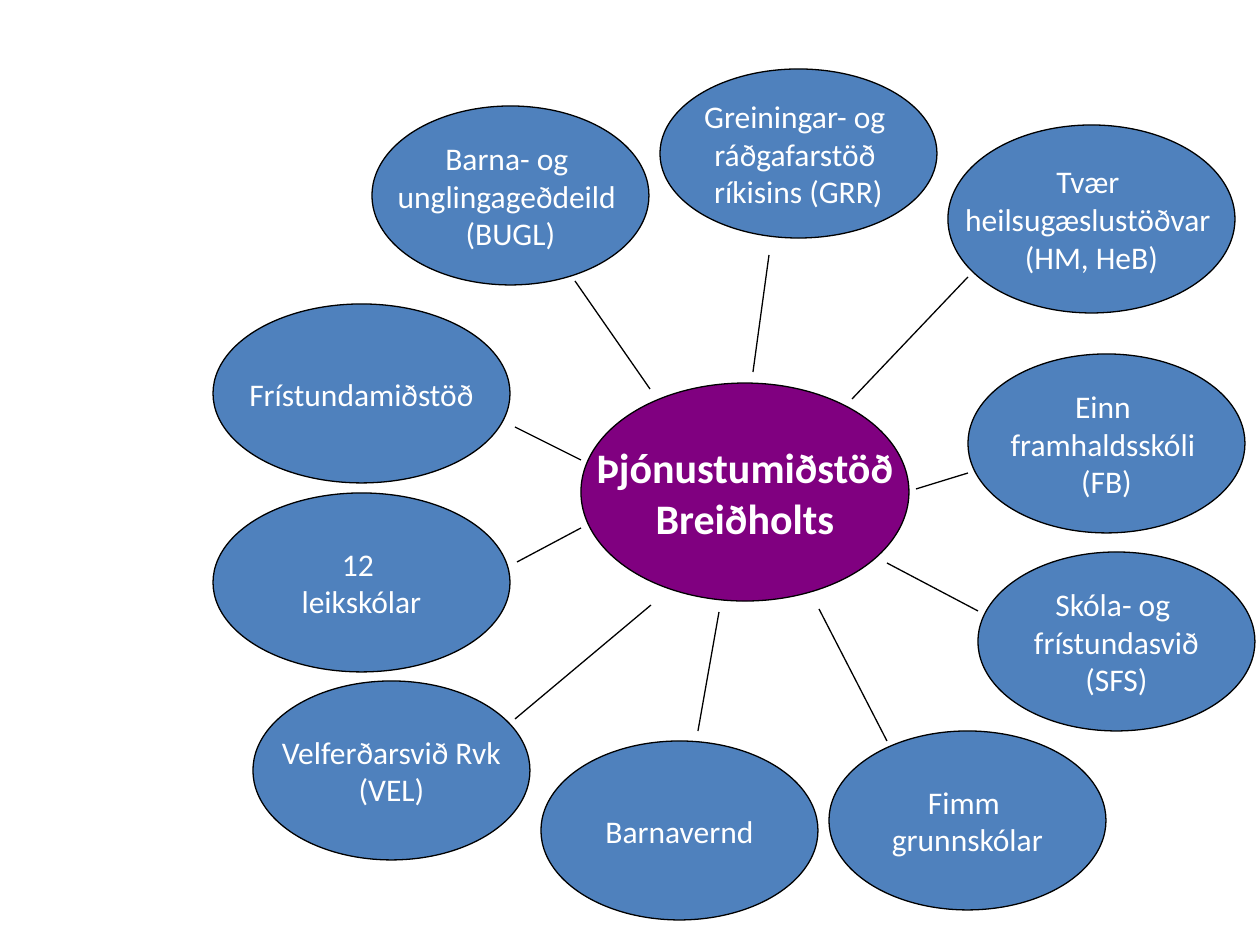
"""Build a slide of a service centre ringed by its ten partners."""
from lxml import etree
from pptx import Presentation
from pptx.dml.color import RGBColor
from pptx.enum.shapes import MSO_CONNECTOR, MSO_SHAPE
from pptx.enum.text import MSO_ANCHOR, PP_ALIGN
from pptx.oxml.ns import qn
from pptx.util import Emu, Pt

OVAL = MSO_SHAPE.OVAL
LINE = MSO_CONNECTOR.STRAIGHT
MIDDLE = MSO_ANCHOR.MIDDLE
CENTER = PP_ALIGN.CENTER

PURPLE = RGBColor(0x80, 0x00, 0x80)
BLUE = RGBColor(0x4F, 0x81, 0xBD)
WHITE = RGBColor(0xFF, 0xFF, 0xFF)
BLACK = RGBColor(0x00, 0x00, 0x00)

DPI = 126
FONT = "Calibri"
SIZE = (277, 179)
WIDE = (297, 179)

HUB = ((581, 383), (328, 218), ["Þjónustumiðstöð", "Breiðholts"])
PARTNERS = [
    ((541, 741), SIZE, ["Barnavernd"]),
    ((213, 304), WIDE, ["Frístundamiðstöð"]),
    ((978, 552), SIZE, ["Skóla- og ", "frístundasvið", "(SFS)"]),
    ((948, 125), (287, 188), ["Tvær ", "heilsugæslustöðvar ", "(HM, HeB)"]),
    ((253, 681), SIZE, ["Velferðarsvið Rvk", "(VEL)"]),
    ((372, 106), SIZE, ["Barna- og ", "unglingageðdeild ", "(BUGL)"]),
    ((660, 69), (277, 169), ["Greiningar- og ", "ráðgafarstöð ", "ríkisins (GRR)"]),
    ((968, 354), SIZE, ["Einn ", "framhaldsskóli ", "(FB)"]),
    ((829, 731), SIZE, ["Fimm ", "grunnskólar"]),
    ((213, 493), WIDE, ["12 ", "leikskólar"]),
]
SPOKES = [
    ((719, 612), (698, 731)),
    ((819, 609), (887, 741)),
    ((887, 563), (978, 611)),
    ((916, 489), (968, 473)),
    ((968, 277), (852, 399)),
    ((769, 255), (753, 372)),
    ((575, 281), (650, 389)),
    ((515, 427), (581, 460)),
    ((517, 562), (581, 528)),
    ((515, 719), (651, 605)),
]


def px(num):
    """Turn px into EMU."""
    return Emu(round(num * 914400 / DPI))


def ink(line):
    """Give a line its thin black stroke."""
    line.color.rgb = BLACK
    line.width = Pt(0.75)


def add_oval(slide, spot, size, rows, fill, points, bold=False):
    """Add an oval with one centred paragraph per row."""
    oval = slide.shapes.add_shape(OVAL, *map(px, spot + size))
    oval.shadow.inherit = False
    oval.fill.solid()
    oval.fill.fore_color.rgb = fill
    ink(oval.line)
    frame = oval.text_frame
    frame.word_wrap = False
    frame.vertical_anchor = MIDDLE
    for i, row in enumerate(rows):
        para = frame.add_paragraph() if i else frame.paragraphs[0]
        para.alignment = CENTER
        run = para.add_run()
        run.text = row
        run.font.name = FONT
        run.font.size = Pt(points)
        run.font.bold = bold
        run.font.color.rgb = WHITE


def add_spoke(slide, start, end):
    """Add a plain line without a shadow."""
    spoke = slide.shapes.add_connector(LINE, *map(px, start + end))
    ink(spoke.line)
    etree.SubElement(spoke._element.spPr, qn("a:effectLst"))


def main():
    """Build and save the slide."""
    deck = Presentation()
    deck.slide_width, deck.slide_height = px(1260), px(945)
    slide = deck.slides.add_slide(deck.slide_layouts.get_by_name("Blank"))
    add_oval(slide, *HUB, PURPLE, 24, True)
    for partner in PARTNERS:
        add_oval(slide, *partner, BLUE, 18)
    for spoke in SPOKES:
        add_spoke(slide, *spoke)
    deck.save("out.pptx")


if __name__ == "__main__":
    main()
